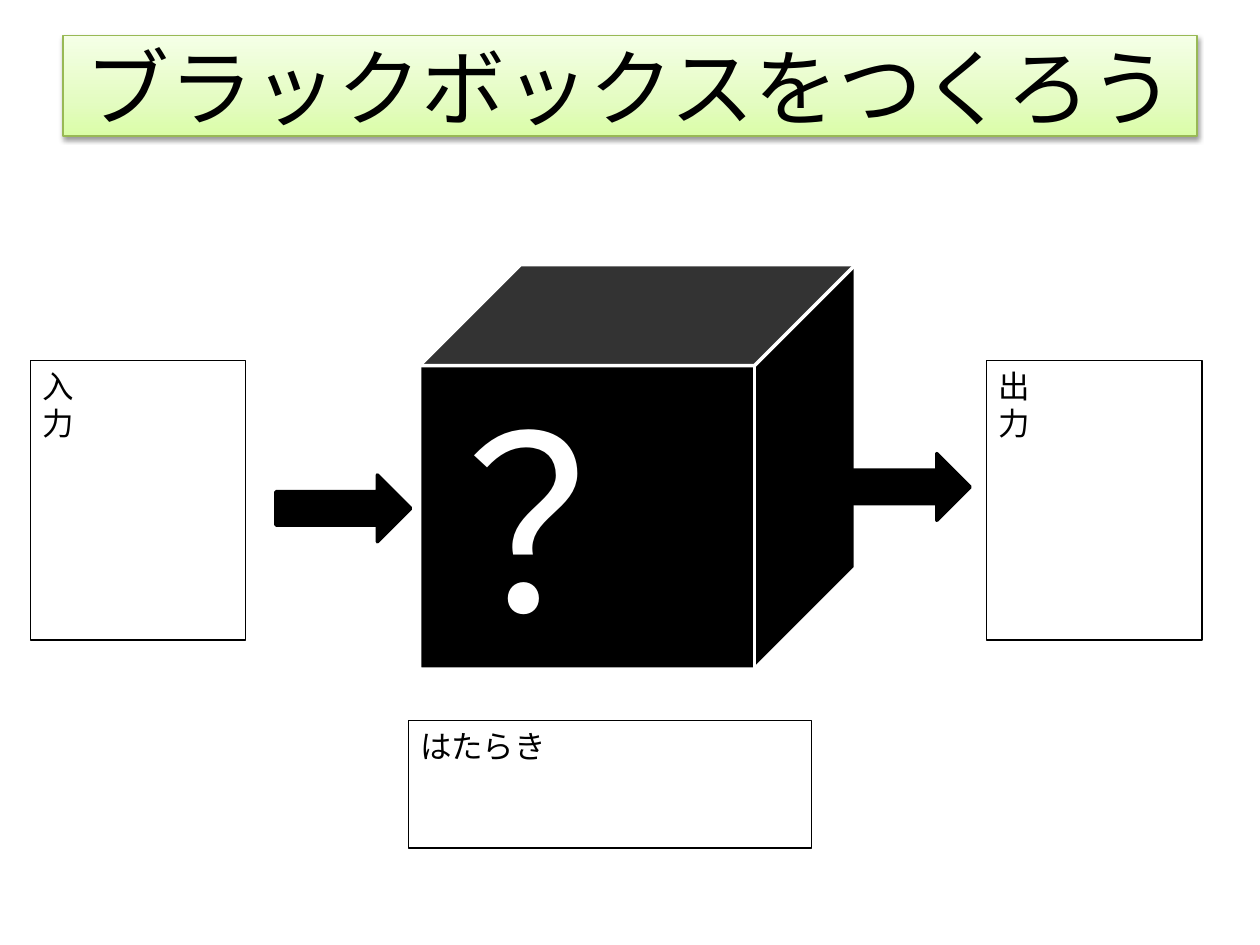
import copy

import lxml.etree
import pptx
import pptx.dml.color
import pptx.enum.shapes
import pptx.enum.text
import pptx.oxml
import pptx.oxml.ns
import pptx.util
from pptx.util import Inches, Pt

RGBColor = pptx.dml.color.RGBColor
MSO_SHAPE = pptx.enum.shapes.MSO_SHAPE
PP_ALIGN = pptx.enum.text.PP_ALIGN
MSO_ANCHOR = pptx.enum.text.MSO_ANCHOR
qn = pptx.oxml.ns.qn

BLACK = RGBColor(0x00, 0x00, 0x00)
WHITE = RGBColor(0xFF, 0xFF, 0xFF)
GREEN_LINE = RGBColor(0x98, 0xB9, 0x55)
GREEN_STOPS = [
    (0, RGBColor(0xDA, 0xFD, 0xA7)),
    (0.35, RGBColor(0xE4, 0xFC, 0xC2)),
    (1, RGBColor(0xF5, 0xFF, 0xE7)),
]

TITLE_SHADOW = (
    f'<a:effectLst {pptx.oxml.ns.nsdecls("a")}>'
    '<a:outerShdw blurRad="40000" dist="20000" dir="5400000" rotWithShape="0">'
    '<a:srgbClr val="000000"><a:alpha val="38000"/></a:srgbClr>'
    '</a:outerShdw></a:effectLst>'
)


def set_line(sp, color, width):
    sp.line.color.rgb = color
    sp.line.width = Pt(width)


def write(sp, text, font, size, color, align, anchor):
    tf = sp.text_frame
    tf.word_wrap = True
    tf.auto_size = pptx.enum.text.MSO_AUTO_SIZE.NONE
    tf.vertical_anchor = anchor
    p = tf.paragraphs[0]
    p.text = text
    p.alignment = align
    p.font.name = font
    p.font.size = Pt(size)
    p.font.color.rgb = color


def fill_gradient(sp):
    """Fill upwards from the darkest green at the bottom edge."""
    sp.fill.gradient()
    sp.fill.gradient_angle = 90
    stops = sp._element.spPr.find(qn("a:gradFill")).find(qn("a:gsLst"))
    stops.insert(1, copy.deepcopy(stops[0]))
    for stop, (position, color) in zip(sp.fill.gradient_stops, GREEN_STOPS):
        stop.position = position
        stop.color.rgb = color


def format_title(slide, text):
    sp = slide.shapes.title
    sp.left, sp.top = Inches(0.5), Inches(0.28)
    sp.width, sp.height = Inches(9), Inches(0.8)
    fill_gradient(sp)
    set_line(sp, GREEN_LINE, 0.75)
    sp._element.spPr.append(pptx.oxml.parse_xml(TITLE_SHADOW))
    write(sp, text, "Calibri", 48, BLACK, PP_ALIGN.CENTER, MSO_ANCHOR.MIDDLE)


def add_solid(slide, kind, left, top, width, height, line):
    sp = slide.shapes.add_shape(
        kind, Inches(left), Inches(top), Inches(width), Inches(height))
    sp.shadow.inherit = False
    sp.fill.solid()
    sp.fill.fore_color.rgb = BLACK
    set_line(sp, line, 2)
    return sp


def add_arrow(slide, left, top):
    sp = add_solid(slide, MSO_SHAPE.RIGHT_ARROW, left, top, 1.07, 0.53, BLACK)
    lxml.etree.SubElement(sp.line._get_or_add_ln(), qn("a:round"))


def add_label_box(slide, text, left, top, width, height, right_inset=0.1):
    sp = slide.shapes.add_textbox(
        Inches(left), Inches(top), Inches(width), Inches(height))
    set_line(sp, BLACK, 0.75)
    write(sp, text, "Arial", 18, BLACK, PP_ALIGN.LEFT, MSO_ANCHOR.TOP)
    sp.text_frame.margin_right = Inches(right_inset)


def main():
    prs = pptx.Presentation()
    prs.slide_width, prs.slide_height = Inches(10), Inches(7.5)
    slide = prs.slides.add_slide(prs.slide_layouts[5])

    format_title(slide, "ブラックボックスをつくろう")

    box = add_solid(slide, MSO_SHAPE.CUBE, 3.33, 2.1, 3.46, 3.21, WHITE)
    write(box, "？", "Calibri", 138, WHITE, PP_ALIGN.CENTER, MSO_ANCHOR.MIDDLE)

    add_arrow(slide, 2.19, 3.77)
    add_arrow(slide, 6.63, 3.6)

    # The wide right inset leaves room for one character per line.
    for text, left in (("入力", 0.24), ("出力", 7.83)):
        add_label_box(slide, text, left, 2.86, 1.71, 2.22, right_inset=1.25)
    add_label_box(slide, "はたらき", 3.24, 5.72, 3.2, 1.01)

    prs.save("out.pptx")


if __name__ == "__main__":
    main()
